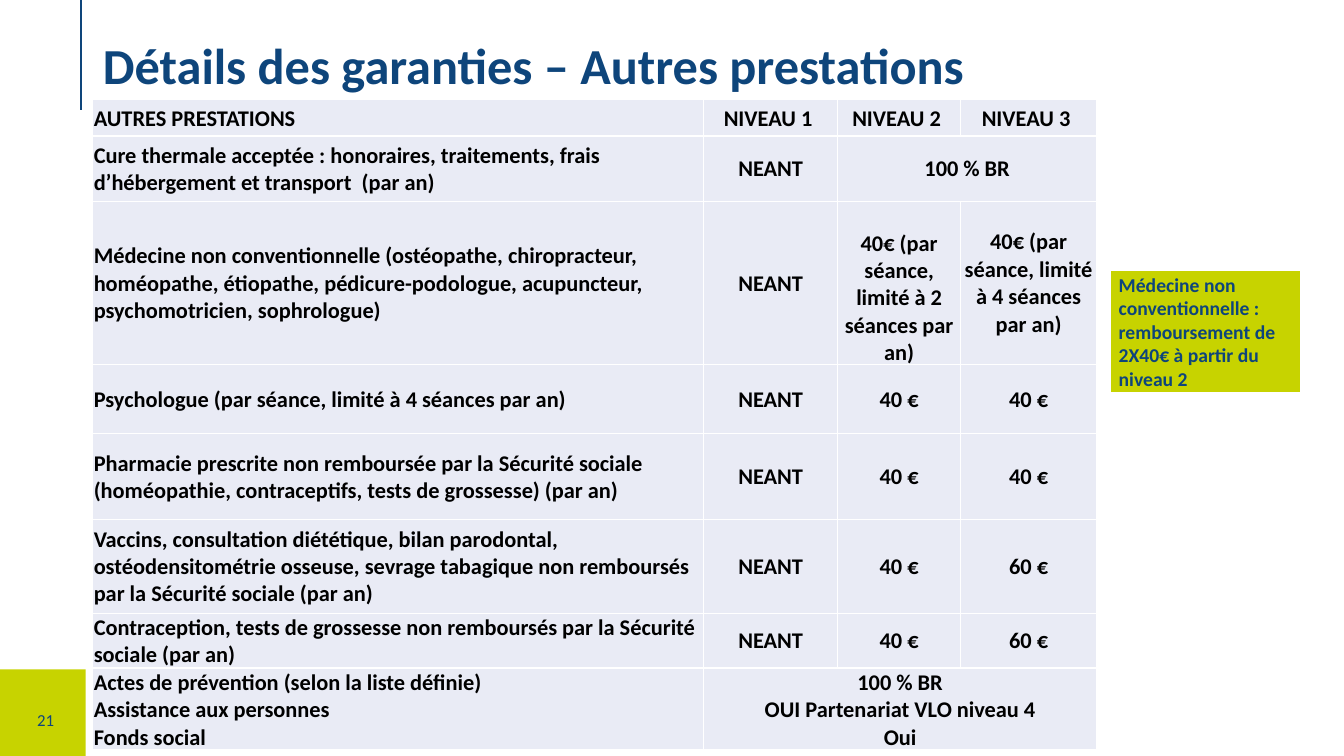
from lxml import etree
from pptx import Presentation
from pptx import util as u
from pptx.dml.color import RGBColor
from pptx.enum import shapes, text
from pptx.oxml.ns import qn

NAVY = RGBColor(0x0E, 0x45, 0x7B)
LIME = RGBColor(0xC7, 0xD3, 0x00)
PALE = RGBColor(0xE9, 0xEB, 0xF5)
WHITE = RGBColor(0xFF, 0xFF, 0xFF)
BLACK = RGBColor(0x00, 0x00, 0x00)

LEFT, CENTER = text.PP_ALIGN.LEFT, text.PP_ALIGN.CENTER

COLUMN_WIDTHS = [436.3, 95.8, 87.8, 97.2]
ROW_HEIGHTS = [25.9, 46.8, 114.5, 49.7, 61.2, 67, 38.9, 57.6]
BENEFITS = [
    ["AUTRES PRESTATIONS", "NIVEAU 1 ", "NIVEAU 2 ", "NIVEAU 3 "],
    ["Cure thermale acceptée : honoraires, traitements, frais d’hébergement et transport  (par an)",
     "NEANT", "100 % BR", None],
    ["Médecine non conventionnelle (ostéopathe, chiropracteur, homéopathe, étiopathe, "
     "pédicure-podologue, acupuncteur, psychomotricien, sophrologue)",
     "NEANT", "40€ (par séance, limité à 2 séances par an)",
     "40€ (par séance, limité à 4 séances par an)"],
    ["Psychologue (par séance, limité à 4 séances par an)", "NEANT", "40 €", "40 €"],
    ["Pharmacie prescrite non remboursée par la Sécurité sociale "
     "(homéopathie, contraceptifs, tests de grossesse) (par an)", "NEANT", "40 €", "40 €"],
    ["Vaccins, consultation diététique, bilan parodontal, ostéodensitométrie osseuse, "
     "sevrage tabagique non remboursés par la Sécurité sociale (par an)",
     "NEANT", "40 €", "60 €"],
    ["Contraception, tests de grossesse non remboursés par la Sécurité sociale (par an)",
     "NEANT", "40 €", "60 €"],
    ["Actes de prévention (selon la liste définie)\nAssistance aux personnes\nFonds social",
     "100 % BR\nOUI Partenariat VLO niveau 4\nOui", None, None],
]


class SlideBuilder:
    font = "Calibri"

    def __init__(self, slide):
        self.slide = slide

    def set_words(self, frame, words, size, color, bold=True, align=LEFT):
        frame.text = words
        frame.word_wrap = True
        for paragraph in frame.paragraphs:
            paragraph.alignment = align
            for run in paragraph.runs:
                run.font.name = self.font
                run.font.size = u.Pt(size)
                run.font.bold = bold
                run.font.color.rgb = color

    def title(self, words, box):
        heading = self.slide.shapes.title
        heading.left, heading.top, heading.width, heading.height = map(u.Pt, box)
        frame = heading.text_frame
        self.set_words(frame, words, 36, NAVY)
        frame.auto_size = text.MSO_AUTO_SIZE.NONE
        frame.vertical_anchor = text.MSO_ANCHOR.TOP
        frame.paragraphs[0].line_spacing = 0.9

    def block(self, box, words=None, border=None):
        panel = self.slide.shapes.add_shape(shapes.MSO_SHAPE.RECTANGLE, *map(u.Pt, box))
        panel.shadow.inherit = False
        panel.fill.solid()
        panel.fill.fore_color.rgb = LIME
        if border:
            panel.line.color.rgb = WHITE
            panel.line.width = u.Pt(border)
        else:
            panel.line.fill.background()
        if words:
            self.set_words(panel.text_frame, words, 14, NAVY)
            panel.text_frame.vertical_anchor = text.MSO_ANCHOR.MIDDLE

    def line(self, *ends):
        rule = self.slide.shapes.add_connector(shapes.MSO_CONNECTOR.STRAIGHT, *map(u.Pt, ends))
        rule.line.color.rgb = NAVY
        rule.line.width = u.Pt(1.25)
        etree.SubElement(rule._element.spPr, qn("a:effectLst"))

    def label(self, words, box):
        frame = self.slide.shapes.add_textbox(*map(u.Pt, box)).text_frame
        self.set_words(frame, words, 12, NAVY, bold=False, align=CENTER)
        frame.vertical_anchor = text.MSO_ANCHOR.MIDDLE

    def borders(self, cell):
        properties = cell._tc.get_or_add_tcPr()
        for place, side in enumerate(("lnL", "lnR", "lnT", "lnB")):
            edge = etree.Element(qn("a:" + side), w=str(u.Pt(1)))
            fill = etree.SubElement(edge, qn("a:solidFill"))
            etree.SubElement(fill, qn("a:srgbClr"), val=str(WHITE))
            properties.insert(place, edge)

    def table(self, left, top, rows, widths, heights):
        grid = self.slide.shapes.add_table(
            len(rows), len(widths), u.Pt(left), u.Pt(top),
            u.Pt(sum(widths)), u.Pt(sum(heights))).table
        grid.first_row = grid.horz_banding = False
        for column, width in zip(grid.columns, widths):
            column.width = u.Pt(width)
        for r, (row, height) in enumerate(zip(rows, heights)):
            grid.rows[r].height = u.Pt(height)
            for c, words in enumerate(row):
                cell = grid.cell(r, c)
                cell.margin_left = cell.margin_right = cell.margin_top = u.Pt(0.7)
                cell.margin_bottom = 0
                cell.vertical_anchor = text.MSO_ANCHOR.MIDDLE
                cell.fill.solid()
                cell.fill.fore_color.rgb = PALE
                self.borders(cell)
                if words:
                    self.set_words(cell.text_frame, words, 16, BLACK, align=CENTER if c else LEFT)
            if None in row:
                grid.cell(r, row.index(None) - 1).merge(grid.cell(r, len(row) - 1))
        return grid


def main():
    deck = Presentation()
    deck.slide_width, deck.slide_height = u.Pt(960), u.Pt(540)
    page = SlideBuilder(deck.slides.add_slide(deck.slide_layouts[5]))
    page.block((-0.7, 478.1, 61.9, 61.9))
    page.line(57.6, 78.5, 57.6, 0)
    page.label("21", (8.6, 498.2, 48.2, 32.4))
    page.title("Détails des garanties – Autres prestations", (66.3, 25.9, 704.2, 45.4))
    benefits = page.table(66.3, 71.3, BENEFITS, COLUMN_WIDTHS, ROW_HEIGHTS)
    benefits.cell(2, 2).margin_top = u.Pt(20.2)
    page.block((792, 192.2, 138.2, 89.3),
               "Médecine non conventionnelle : remboursement de  2X40€ à partir du niveau 2", 3.25)
    deck.save("out.pptx")


if __name__ == "__main__":
    main()
